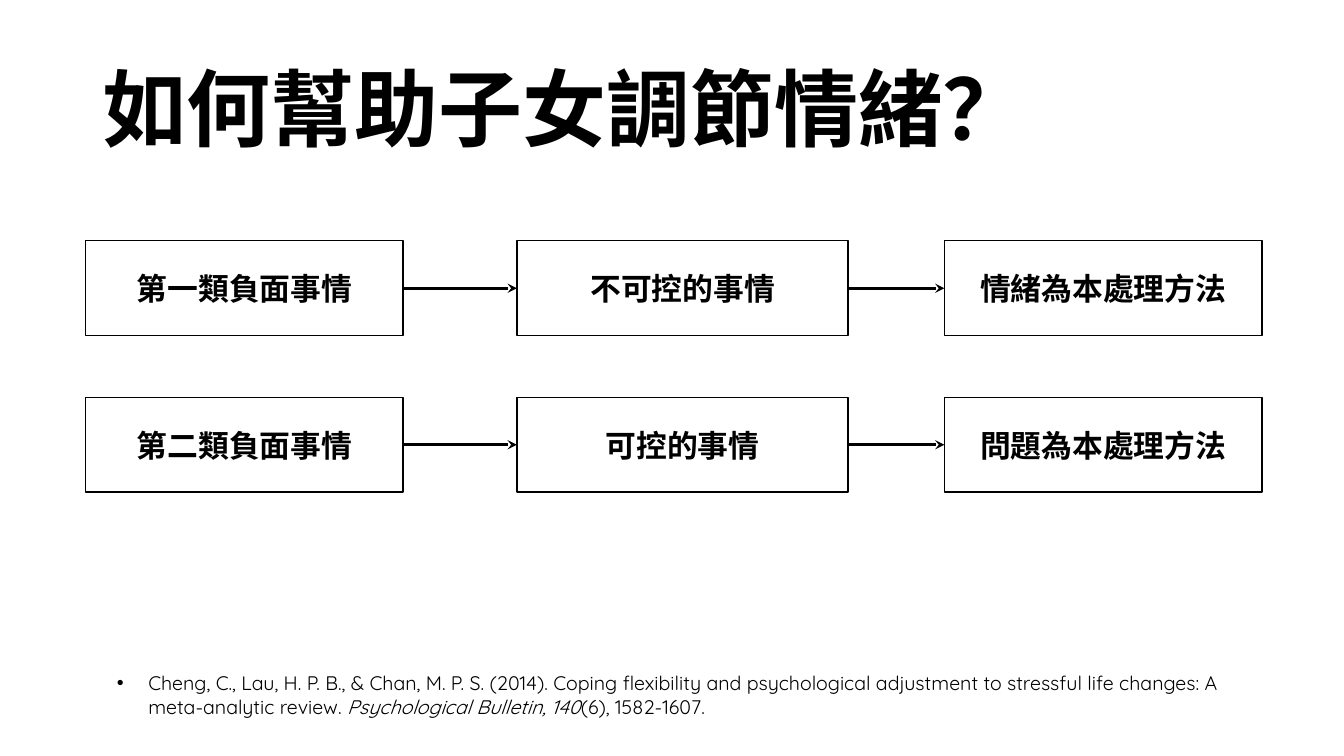
from lxml.etree import SubElement
from pptx import Presentation
from pptx.dml.color import RGBColor
from pptx.enum.shapes import MSO_CONNECTOR, MSO_SHAPE
from pptx.enum.text import MSO_ANCHOR, PP_ALIGN
from pptx.oxml.ns import qn
from pptx.util import Pt

# Content
TITLE = "如何幫助子女調節情緒？"
FLOWS = [
    ("第一類負面事情", "不可控的事情", "情緒為本處理方法"),
    ("第二類負面事情", "可控的事情", "問題為本處理方法"),
]
# Each run: text, italic
REFERENCE = [
    ("Cheng, C., Lau, H. P. B., & Chan, M. P. S. (2014). Coping flexibility and "
     "psychological adjustment to stressful life changes: A meta-analytic review. ", False),
    ("Psychological Bulletin, 140", True),
    ("(6), 1582-1607.", False),
]

# Format and layout, in points
COLORS = {"ink": "000000"}
LATIN, CJK = "Quicksand", "Noto Sans CJK TC"
COLUMNS = [(61.2, 226.8), (369.2, 236.6), (674.6, 226.8)]  # left, width
FIRST_TOP, ROW_STEP, BOX_HEIGHT = 172, 111.8, 67.8
INDENT = 22.5

INK = RGBColor.from_string(COLORS["ink"])


def write_text(shape, runs, size, font=LATIN, bold=False, align=PP_ALIGN.LEFT,
               anchor=MSO_ANCHOR.MIDDLE, spacing=1.0):
    frame = shape.text_frame
    frame.word_wrap = True
    frame.vertical_anchor = anchor
    paragraph = frame.paragraphs[0]
    paragraph.alignment = align
    paragraph.line_spacing = spacing
    for words, italic in runs:
        run = paragraph.add_run()
        run.text = words
        run.font.size = Pt(size)
        run.font.bold = bold
        run.font.italic = italic
        run.font.color.rgb = INK
        run.font.name = font
        SubElement(run.font._element, qn("a:ea"), typeface=CJK)
    return paragraph


def add_box(slide, words, left, top, width):
    box = slide.shapes.add_shape(MSO_SHAPE.RECTANGLE, Pt(left), Pt(top), Pt(width), Pt(BOX_HEIGHT))
    box.shadow.inherit = False
    box.fill.background()
    box.line.color.rgb = INK
    box.line.width = Pt(1)
    write_text(box, [(words, False)], 22, bold=True, align=PP_ALIGN.CENTER)


def add_arrow(slide, start, end, y):
    arrow = slide.shapes.add_connector(MSO_CONNECTOR.STRAIGHT, Pt(start), Pt(y), Pt(end), Pt(y))
    arrow.line.color.rgb = INK
    arrow.line.width = Pt(2.25)
    SubElement(arrow.line._get_or_add_ln(), qn("a:tailEnd"), type="stealth")
    SubElement(arrow._element.spPr, qn("a:effectLst"))


def main():
    deck = Presentation()
    deck.slide_width, deck.slide_height = Pt(960), Pt(540)
    slide = deck.slides.add_slide(deck.slide_layouts[6])

    # Title
    title = slide.shapes.add_textbox(Pt(66), Pt(28.8), Pt(828), Pt(104.4))
    write_text(title, [(TITLE, False)], 60, font=CJK, bold=True, spacing=0.9)

    # Flow rows: boxes, with arrows across the gaps
    for row, steps in enumerate(FLOWS):
        top = FIRST_TOP + row * ROW_STEP
        for words, (left, width) in zip(steps, COLUMNS):
            add_box(slide, words, left, top, width)
        for (left, width), (next_left, _) in zip(COLUMNS, COLUMNS[1:]):
            add_arrow(slide, left + width, next_left, top + BOX_HEIGHT / 2)

    # Bulleted reference
    reference = slide.shapes.add_textbox(Pt(76.3), Pt(476), Pt(843.8), Pt(41.2))
    paragraph = write_text(reference, REFERENCE, 14, anchor=MSO_ANCHOR.TOP)
    properties = paragraph._p.get_or_add_pPr()
    properties.set("marL", str(Pt(INDENT)))
    properties.set("indent", str(-Pt(INDENT)))
    SubElement(properties, qn("a:buFont"), typeface="Arial")
    SubElement(properties, qn("a:buChar"), char="•")

    deck.save("out.pptx")


if __name__ == "__main__":
    main()
